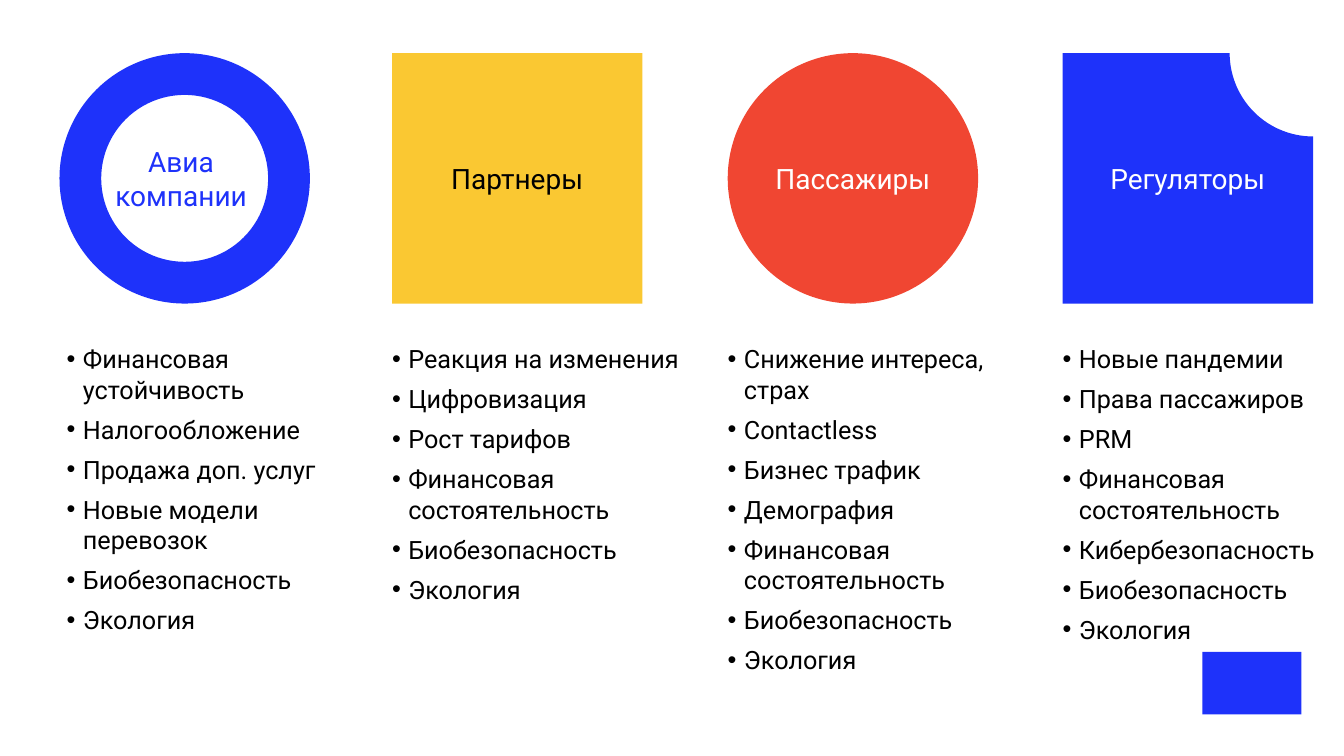
import math
from dataclasses import dataclass

from lxml import etree
from pptx import Presentation
from pptx.dml.color import RGBColor
from pptx.enum import shapes, text
from pptx.oxml import ns
from pptx.util import Cm, Pt


@dataclass(frozen=True)
class Theme:
    font: str = "Roboto"
    blue: RGBColor = RGBColor(0x1E, 0x32, 0xFA)
    yellow: RGBColor = RGBColor(0xFA, 0xC8, 0x32)
    red: RGBColor = RGBColor(0xF0, 0x46, 0x32)
    black: RGBColor = RGBColor(0, 0, 0)
    white: RGBColor = RGBColor(0xFF, 0xFF, 0xFF)
    label_size: Pt = Pt(20)
    list_size: Pt = Pt(18)


THEME = Theme()
SIZE = Cm(6.31)
TOP = Cm(1.34)
LIST_TOP = Cm(8.66)
INDENT = Cm(0.41)
NOTCH = Cm(2.1)
AIRLINES, PARTNERS, PASSENGERS, REGULATORS = Cm(1.5), Cm(9.88), Cm(18.34), Cm(26.78)

LISTS = (
    (Cm(1.68), Cm(7.14), (
        "Финансовая устойчивость", "Налогообложение", "Продажа доп. услуг",
        "Новые модели перевозок", "Биобезопасность", "Экология")),
    (PARTNERS, Cm(7.37), (
        "Реакция на изменения", "Цифровизация", "Рост тарифов",
        "Финансовая состоятельность", "Биобезопасность", "Экология")),
    (PASSENGERS, Cm(7.37), (
        "Снижение интереса, страх", "Contactless", "Бизнес трафик", "Демография",
        "Финансовая состоятельность", "Биобезопасность", "Экология")),
    (REGULATORS, Cm(6.81), (
        "Новые пандемии", "Права пассажиров", "PRM", "Финансовая состоятельность",
        "Кибербезопасность", "Биобезопасность", "Экология")),
)


def apply_format(target, values):
    for name, value in values.items():
        setattr(target, name, value)


def format_frame(frame, **values):
    margins = dict.fromkeys(
        ("margin_left", "margin_top", "margin_right", "margin_bottom"), 0)
    apply_format(frame, {**margins, **values})


def style_runs(paragraph, size, color):
    for run in paragraph.runs:
        apply_format(run.font, {"name": THEME.font, "size": size})
        run.font.color.rgb = color


def paint(shape, color):
    shape.shadow.inherit = False
    shape.fill.solid()
    shape.fill.fore_color.rgb = color
    shape.line.fill.background()


def add_figure(slide, kind, left, top, width, height, color):
    shape = slide.shapes.add_shape(kind, left, top, width, height)
    paint(shape, color)
    return shape


def add_notched_square(slide, left, top):
    """Draw a square whose top right corner is cut by a quarter circle."""
    right, bottom = left + SIZE, top + SIZE
    angles = [math.radians(90 + 3 * step) for step in range(31)]
    arc = [(right + NOTCH * math.cos(angle), top + NOTCH * math.sin(angle))
           for angle in angles]
    builder = slide.shapes.build_freeform(left, top)
    builder.add_line_segments([(left, bottom), (right, bottom), *arc], close=True)
    paint(builder.convert_to_shape(), THEME.blue)


def write_label(shape, wording, color):
    frame = shape.text_frame
    format_frame(frame, word_wrap=False, vertical_anchor=text.MSO_ANCHOR.MIDDLE)
    frame.text = wording
    for paragraph in frame.paragraphs:
        paragraph.alignment = text.PP_ALIGN.CENTER
        style_runs(paragraph, THEME.label_size, color)


def add_bullet(paragraph):
    properties = paragraph._p.get_or_add_pPr()
    properties.set("marL", str(INDENT))
    properties.set("indent", str(-INDENT))
    etree.SubElement(properties, ns.qn("a:buFont"), typeface="Arial")
    etree.SubElement(properties, ns.qn("a:buChar"), char="•")


def add_list(slide, left, width, items):
    height = Cm(7)
    frame = slide.shapes.add_textbox(left, LIST_TOP, width, height).text_frame
    format_frame(frame, word_wrap=True,
                 auto_size=text.MSO_AUTO_SIZE.SHAPE_TO_FIT_TEXT)
    frame.text = "\n".join(items)
    for paragraph in frame.paragraphs:
        add_bullet(paragraph)
        apply_format(paragraph, {"level": 1, "space_before": Pt(0),
                                 "space_after": Pt(7)})
        style_runs(paragraph, THEME.list_size, THEME.black)


def main():
    presentation = Presentation()
    apply_format(presentation, {"slide_width": Cm(33.87), "slide_height": Cm(19.05)})
    slide = presentation.slides.add_slide(presentation.slide_layouts[6])
    kinds = shapes.MSO_SHAPE

    add_figure(slide, kinds.RECTANGLE, Cm(30.3), Cm(16.43), Cm(2.5), Cm(1.57),
               THEME.blue)

    ring = add_figure(slide, kinds.DONUT, AIRLINES, TOP, SIZE, SIZE, THEME.blue)
    ring.adjustments[0] = 1 / 6
    airlines = slide.shapes.add_textbox(Cm(2.51), Cm(2.44), Cm(4.11), Cm(4.11))
    write_label(airlines, "Авиа\nкомпании", THEME.blue)

    square = add_figure(slide, kinds.RECTANGLE, PARTNERS, TOP, SIZE, SIZE, THEME.yellow)
    write_label(square, "Партнеры", THEME.black)

    circle = add_figure(slide, kinds.OVAL, PASSENGERS, TOP, SIZE, SIZE, THEME.red)
    write_label(circle, "Пассажиры", THEME.white)

    add_notched_square(slide, REGULATORS, TOP)
    regulators = slide.shapes.add_textbox(REGULATORS, Cm(3.12), SIZE, Cm(2.74))
    write_label(regulators, "Регуляторы", THEME.white)

    for left, width, items in LISTS:
        add_list(slide, left, width, items)

    presentation.save("out.pptx")


if __name__ == "__main__":
    main()
